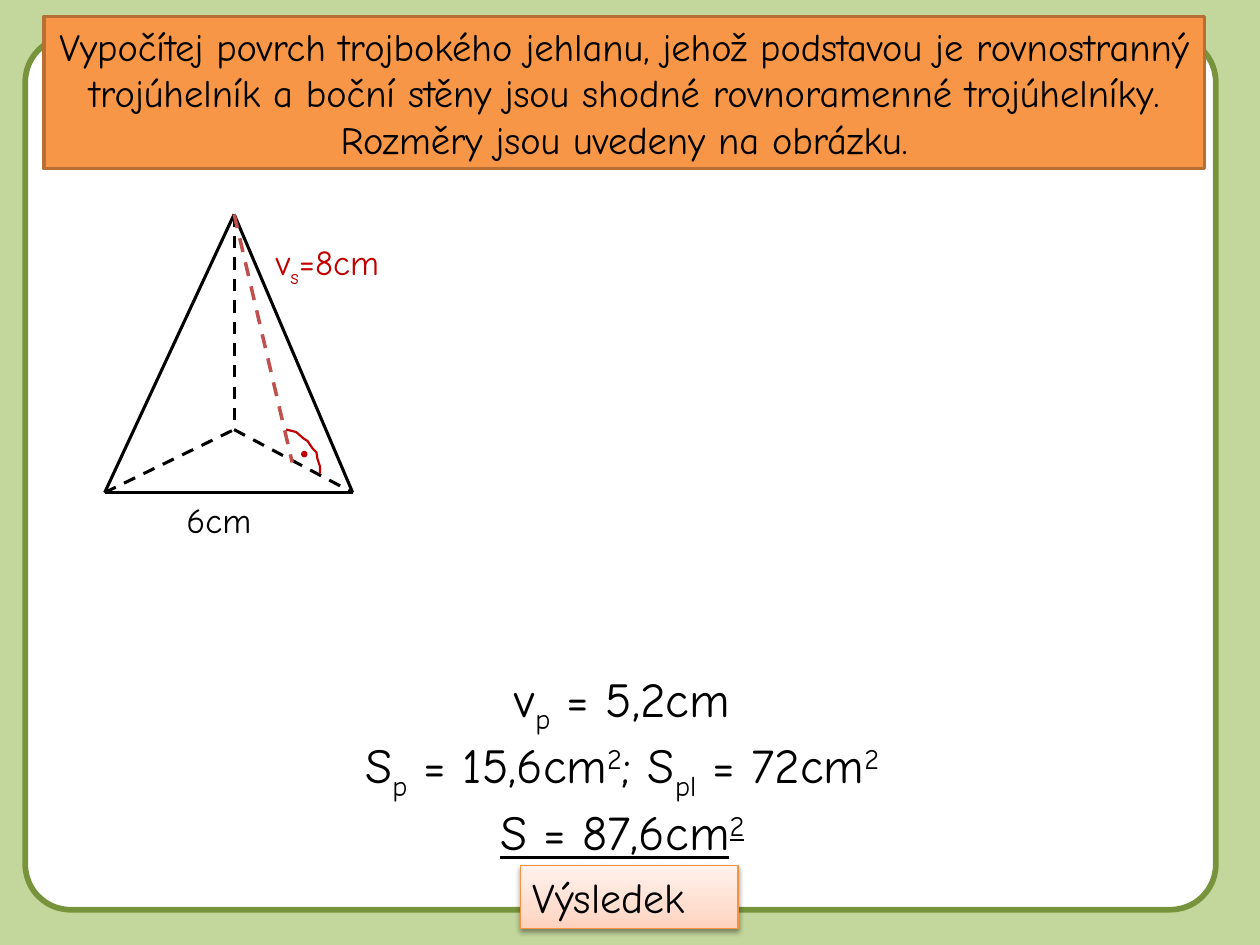
from copy import deepcopy

from lxml import etree
from pptx import Presentation
from pptx.dml.color import RGBColor
from pptx.enum.dml import MSO_LINE_DASH_STYLE as DASH
from pptx.enum.shapes import MSO_CONNECTOR as CONN, MSO_SHAPE as SHAPE
from pptx.enum.text import MSO_ANCHOR, MSO_AUTO_SIZE as FIT, PP_ALIGN as ALIGN
from pptx.oxml import parse_xml
from pptx.oxml.ns import nsdecls, qn
from pptx.util import Cm, Pt

BLACK = RGBColor(0x00, 0x00, 0x00)
WHITE = RGBColor(0xFF, 0xFF, 0xFF)
PALE_GREEN = RGBColor(0xC3, 0xD6, 0x9B)
GREEN = RGBColor(0x77, 0x93, 0x3C)
ORANGE = RGBColor(0xF7, 0x96, 0x46)
BROWN = RGBColor(0xB7, 0x6F, 0x34)
BUTTON_LINE = RGBColor(0xF6, 0x92, 0x40)
RED = RGBColor(0xC0, 0x00, 0x00)
SOFT_RED = RGBColor(0xC0, 0x50, 0x4D)
BUTTON_STOPS = [
    (0, RGBColor(0xFF, 0xD2, 0xBD)),
    (0.35, RGBColor(0xFF, 0xDE, 0xD0)),
    (1, RGBColor(0xFF, 0xF2, 0xED)),
]

FONT = "Comic Neue"
SUB, SUP = -25000, 30000
TASK = (
    "Vypočítej povrch trojbokého jehlanu, jehož podstavou je rovnostranný "
    "trojúhelník a boční stěny jsou shodné rovnoramenné trojúhelníky. "
    "Rozměry jsou uvedeny na obrázku."
)
RESULTS = [
    [("v", 0), ("p", SUB), (" = 5,2cm", 0)],
    [("S", 0), ("p", SUB), (" = 15,6cm", 0), ("2", SUP),
     ("; S", 0), ("pl", SUB), (" = 72cm", 0), ("2", SUP)],
    [("S = 87,6cm", 0), ("2", SUP)],
]

LEFT, RIGHT = (2.11, 9.93), (7.11, 9.93)
BACK, APEX, FOOT = (4.72, 8.66), (4.72, 4.32), (5.89, 9.32)
EDGES = [
    (LEFT, RIGHT, None), (LEFT, BACK, DASH.DASH), (BACK, RIGHT, DASH.DASH),
    (LEFT, APEX, None), (APEX, BACK, DASH.DASH), (APEX, RIGHT, None),
]
ANGLE_ARC = [
    (5.77, 8.66), (5.97, 8.71), (6.12, 8.84), (6.2, 8.89), (6.3, 9.04),
    (6.38, 9.12), (6.4, 9.25), (6.45, 9.4), (6.45, 9.55),
]


def set_attrs(obj, values):
    for name, value in values.items():
        setattr(obj, name, value)


def place(shape, box):
    names = ("left", "top", "width", "height")
    set_attrs(shape, dict(zip(names, map(Cm, box))))


def set_line(shape, color, width, dash=None):
    shape.line.color.rgb = color
    set_attrs(shape.line, {"width": Pt(width), "dash_style": dash})


def set_fill(shape, color):
    shape.fill.solid()
    shape.fill.fore_color.rgb = color


def add_shadow(effects, blur, dist):
    effects.append(parse_xml(
        f'<a:outerShdw {nsdecls("a")} blurRad="{Pt(blur)}" dist="{Pt(dist)}" '
        'dir="5400000" rotWithShape="0"><a:srgbClr val="000000">'
        '<a:alpha val="38000"/></a:srgbClr></a:outerShdw>'))


def add_run(p, text, size, color, baseline=0, underline=None, shadow=False):
    r = p.add_run()
    r.text = text
    set_attrs(r.font, {"size": Pt(size), "name": FONT, "underline": underline})
    r.font.color.rgb = color
    rpr = r._r.get_or_add_rPr()
    if baseline:
        rpr.set("baseline", str(baseline))
    if shadow:
        effects = etree.Element(qn("a:effectLst"))
        rpr.find(qn("a:latin")).addprevious(effects)
        add_shadow(effects, 3, 3)


def frame_text(shape, align, anchor=MSO_ANCHOR.TOP):
    tf = shape.text_frame
    set_attrs(tf, {"word_wrap": True, "auto_size": FIT.SHAPE_TO_FIT_TEXT,
                   "vertical_anchor": anchor})
    tf.paragraphs[0].alignment = align
    return tf


def add_label(s, box, runs, color):
    label = s.shapes.add_textbox(*map(Cm, box))
    p = frame_text(label, ALIGN.LEFT).paragraphs[0]
    for text, baseline in runs:
        add_run(p, text, 20, color, baseline)


def add_preset(shapes, kind, box, fill=None):
    sp = shapes.add_shape(kind, *map(Cm, box))
    sp.shadow.inherit = False
    if fill is not None:
        set_fill(sp, fill)
    return sp


def add_edge(shapes, start, end, color, width, dash=None):
    edge = shapes.add_connector(CONN.STRAIGHT, *map(Cm, start + end))
    set_line(edge, color, width, dash)
    etree.SubElement(edge._element.spPr, qn("a:effectLst"))


def add_frame(s):
    frame = add_preset(s.shapes, SHAPE.ROUNDED_RECTANGLE,
                       (0.51, 0.74, 24, 17.6), WHITE)
    frame.adjustments[0] = 0.052
    set_line(frame, GREEN, 3.25)
    tree = frame.element.getparent()
    tree.insert(2, frame.element)


def fill_task(title):
    place(title, (0.89, 0.33, 23.39, 3.07))
    set_fill(title, ORANGE)
    set_line(title, BROWN, 2)
    tf = frame_text(title, ALIGN.CENTER, MSO_ANCHOR.MIDDLE)
    add_run(tf.paragraphs[0], TASK, 22, BLACK)


def fill_results(body):
    place(body, (5.89, 13.34, 13.31, 3.84))
    tf = frame_text(body, ALIGN.CENTER)
    for i, runs in enumerate(RESULTS):
        p = tf.add_paragraph() if i else tf.paragraphs[0]
        set_attrs(p, {"alignment": ALIGN.CENTER, "space_before": Pt(0)})
        ppr = p._p.get_or_add_pPr()
        ppr.set("marL", "0")
        ppr.set("indent", "0")
        etree.SubElement(ppr, qn("a:buNone"))
        underline = True if i == len(RESULTS) - 1 else None
        for text, baseline in runs:
            add_run(p, text, 28, BLACK, baseline, underline, shadow=True)


def add_button(s):
    button = add_preset(s.shapes, SHAPE.RECTANGLE, (10.49, 17.45, 4.39, 1.27))
    button.fill.gradient()
    button.fill.gradient_angle = 90
    spPr = button._element.spPr
    first = spPr.find(".//" + qn("a:gs"))
    first.addnext(deepcopy(first))
    for stop, (position, color) in zip(button.fill.gradient_stops, BUTTON_STOPS):
        stop.position = position
        stop.color.rgb = color
    set_line(button, BUTTON_LINE, 0.75)
    add_shadow(spPr.find(qn("a:effectLst")), 3.1, 1.6)
    tf = frame_text(button, ALIGN.LEFT, MSO_ANCHOR.MIDDLE)
    add_run(tf.paragraphs[0], "Výsledek", 24, BLACK)


def add_pyramid(s):
    pyramid = s.shapes.add_group_shape().shapes
    for start, end, dash in EDGES:
        add_edge(pyramid, start, end, BLACK, 1.75, dash)


def add_height(s):
    height = s.shapes.add_group_shape().shapes
    add_edge(height, APEX, FOOT, SOFT_RED, 2, DASH.DASH)
    points = [(Cm(x), Cm(y)) for x, y in ANGLE_ARC]
    builder = height.build_freeform(*points[0])
    builder.add_line_segments(points[1:], close=False)
    arc = builder.convert_to_shape()
    arc.shadow.inherit = False
    arc.fill.background()
    set_line(arc, RED, 1.25)
    dot = add_preset(height, SHAPE.OVAL, (6.07, 9.09, 0.13, 0.13), RED)
    dot.line.fill.background()


def main():
    prs = Presentation()
    set_attrs(prs, {"slide_width": Cm(25.4), "slide_height": Cm(19.05)})
    s = prs.slides.add_slide(prs.slide_layouts[1])
    set_fill(s.background, PALE_GREEN)
    add_frame(s)
    fill_task(s.shapes.title)
    fill_results(s.placeholders[1])
    add_label(s, (3.51, 9.93, 2.39, 1.12), [("6cm", 0)], BLACK)
    add_label(s, (5.31, 4.72, 3, 1.12), [("v", 0), ("s", SUB), ("=8cm", 0)], RED)
    add_button(s)
    add_pyramid(s)
    add_height(s)
    prs.save("out.pptx")


if __name__ == "__main__":
    main()
